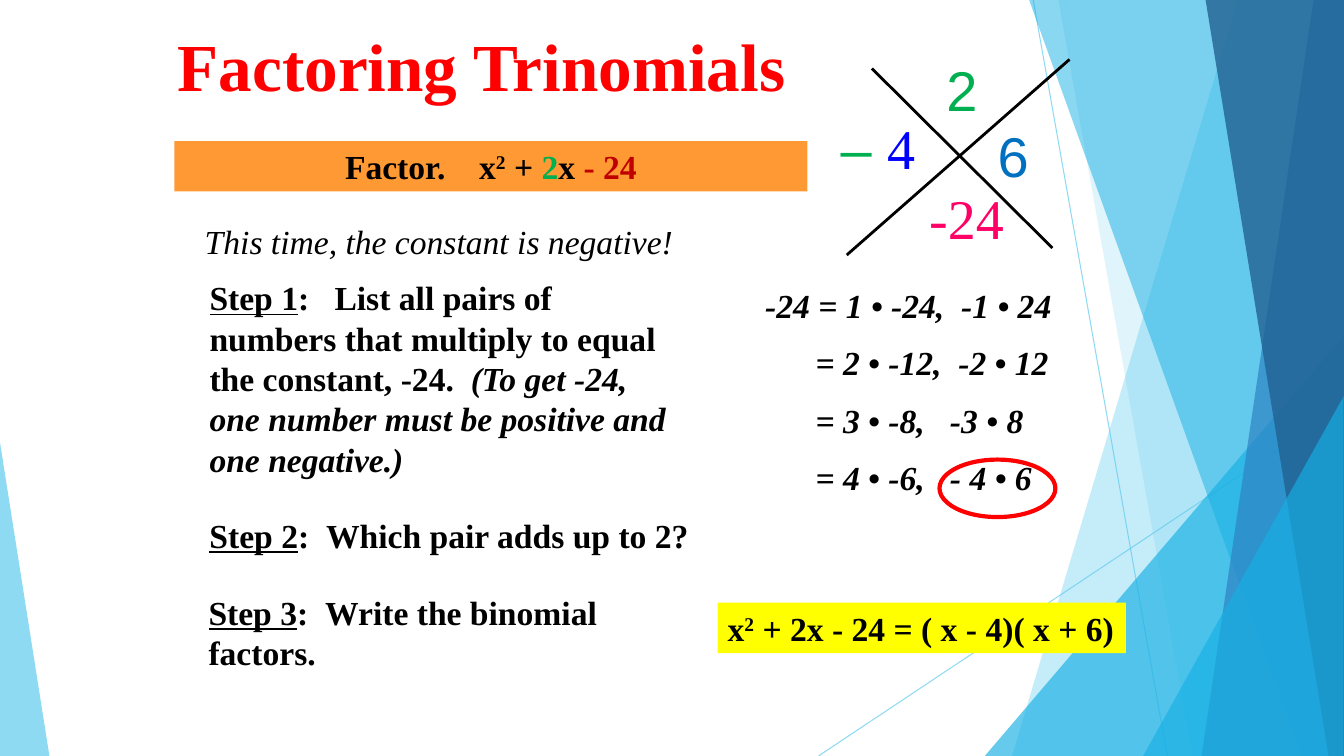
"""Build the Factoring Trinomials slide on a grid of tenth-inch cells."""
import pptx
import pptx.util
from pptx.dml.color import RGBColor
from pptx.enum.shapes import MSO_CONNECTOR, MSO_SHAPE
from pptx.enum.text import MSO_ANCHOR, MSO_AUTO_SIZE, PP_ALIGN
from pptx.oxml.ns import qn
from lxml import etree

CELL = pptx.util.Inches(0.1)
COLUMNS, ROWS = 133.33, 75
BLACK, GREEN, SKY, AZURE = "000000", "00B050", "5FCBEF", "17B0E4"
LEFT, CENTER = PP_ALIGN.LEFT, PP_ALIGN.CENTER
SPACE_WIDTH = 6


def paint(fill, color):
    """Fill a shape, a line or a font with a hex colour."""
    fill.solid()
    fill.fore_color.rgb = RGBColor.from_string(color)


def write(shape, cells, paragraphs, size=24, align=LEFT, wrap=True, gap=0):
    """Place a shape on the grid and write its paragraphs; a digit in a style widens a space."""
    shape.left, shape.top, shape.width, shape.height = (round(cell * CELL) for cell in cells)
    frame = shape.text_frame
    frame.word_wrap = wrap
    frame.auto_size = MSO_AUTO_SIZE.NONE
    frame.vertical_anchor = MSO_ANCHOR.TOP
    for index, (margin, runs) in enumerate(paragraphs):
        paragraph = frame.add_paragraph() if index else frame.paragraphs[0]
        properties = paragraph._p.get_or_add_pPr()
        properties.set("marL", str(margin * CELL))
        properties.set("indent", "0")
        etree.SubElement(properties, qn("a:buNone"))
        paragraph.alignment = align
        paragraph.space_before = pptx.util.Pt(gap if index else 0)
        for text, style, color in runs:
            run = paragraph.add_run()
            run.text = text
            run.font.name = "Arial" if "a" in style else "Times New Roman"
            run.font.size = pptx.util.Pt(size)
            run.font.bold = "b" in style
            run.font.italic = "i" in style
            run.font.underline = "u" in style
            paint(run.font.fill, color)
            if "^" in style:
                run._r.get_or_add_rPr().set("baseline", "30000")
            if style[-1:].isdigit():
                spacing = int(style[-1]) * SPACE_WIDTH * 100
                run._r.get_or_add_rPr().set("spc", str(spacing))


presentation = pptx.Presentation()
presentation.slide_width = round(COLUMNS * CELL)
presentation.slide_height = ROWS * CELL
slide = presentation.slides.add_slide(presentation.slide_layouts[1])
shapes = slide.shapes

layers = [
    ("line", SKY, 70, (102.5, 0, 115.8, ROWS, 0.75)),
    ("line", SKY, 70, (COLUMNS, 40.3, 81.2, ROWS, 0.75)),
    ("band", SKY, 36, (122.8, 100.4)),
    ("band", SKY, 20, (105, 118.3)),
    ("triangle", AZURE, 66, (97.7, 33.3, 35.6, 41.7, 1)),
    ("band", AZURE, 50, (102.1, 129.1)),
    ("band", "2E83C3", 70, (130.3, 119.2)),
    ("band", "226292", 80, (119.6, 131.8)),
    ("triangle", AZURE, 66, (113.4, 39.3, 19.9, 35.7, 1)),
    ("triangle", SKY, 70, (0, 43.9, 4.9, 31.1, 0)),
    ("line", BLACK, 100, (86.5, 6.8, 104.4, 24.6, 2)),
    ("line", BLACK, 100, (106.1, 5.9, 84, 25.3, 2)),
]
for kind, color, opacity, numbers in layers:
    lengths = [round(number * CELL) for number in numbers]
    if kind == "line":
        shape = shapes.add_connector(MSO_CONNECTOR.STRAIGHT, *lengths[:4])
        shape.line.width = pptx.util.Pt(numbers[4])
        paint(shape.line.fill, color)
        etree.SubElement(shape.element.spPr, qn("a:effectLst"))
    else:
        if kind == "band":
            top, bottom = lengths
            right, floor = presentation.slide_width, presentation.slide_height
            builder = shapes.build_freeform(top, 0)
            builder.add_line_segments([(right, 0), (right, floor), (bottom, floor)])
            shape = builder.convert_to_shape()
        else:
            shape = shapes.add_shape(MSO_SHAPE.ISOSCELES_TRIANGLE, *lengths[:4])
            shape.adjustments[0] = numbers[4]
        paint(shape.fill, color)
        shape.line.fill.background()
        shape.shadow.inherit = False
    for tint in shape.element.iter(qn("a:srgbClr")):
        etree.SubElement(tint, qn("a:alpha"), val=str(opacity * 1000))

write(shapes.title, (12.5, 1.9, 70.6, 9),
      [(0, [("Factoring Trinomials", "b", "FF0000")])], size=48, align=CENTER)

equations = [
    (0, "-24 = 1 • -24,", "1", "-1 • 24"),
    (5, "= 2 • -12,", "1", "-2 • 12"),
    (5, "= 3 • -8,", "2", "-3 • 8"),
    (5, "= 4 • -6,", "2", "- 4 • 6"),
]
write(slide.placeholders[1], (74.9, 27.8, 38.9, 23.2),
      [(margin, [(first, "bi", BLACK), (" ", "bi" + extra, BLACK), (second, "bi", BLACK)])
       for margin, first, extra, second in equations], gap=12)

steps = [
    ((19.8, 27, 47.5, 21.2), "Step 1", "2",
     "List all pairs of numbers that multiply to equal the constant, -24.",
     "(To get -24, one number must be positive and one negative.)"),
    ((19.8, 50.6, 50.7, 5), "Step 2", "1", "Which pair adds up to 2?", ""),
    ((19.7, 58.2, 50.9, 9.1), "Step 3", "1", "Write the binomial factors.", ""),
]
for cells, label, extra, task, hint in steps:
    runs = [(label, "bu", BLACK), (":", "b", BLACK), (" ", "b" + extra, BLACK), (task, "b", BLACK)]
    if hint:
        runs += [(" ", "b1", BLACK), (hint, "bi", BLACK)]
    write(shapes.add_textbox(0, 0, CELL, CELL), cells, [(0, runs)])

write(shapes.add_textbox(0, 0, CELL, CELL), (15.8, 21.4, 55.5, 5),
      [(0, [("This time, the constant is negative!", "i", BLACK)])], align=CENTER)

banners = [
    ((17.3, 14, 62.8, 5), "FF9933", CENTER, True,
     [("Factor.", "b", BLACK), (" ", "b3", BLACK), ("x", "b", BLACK), ("2", "b^", BLACK),
      (" + ", "b", BLACK), ("2", "b", GREEN), ("x ", "b", BLACK), ("- 24", "b", "C00000")]),
    ((71.2, 59.8, 40.5, 5), "FFFF00", LEFT, False,
     [("x", "b", BLACK), ("2", "b^", BLACK), (" + 2x - 24 = ( x - 4)( x + 6)", "b", BLACK)]),
]
for cells, color, align, wrap, runs in banners:
    banner = shapes.add_shape(MSO_SHAPE.RECTANGLE, 0, 0, CELL, CELL)
    banner.shadow.inherit = False
    banner.line.fill.background()
    paint(banner.fill, color)
    write(banner, cells, [(0, runs)], align=align, wrap=wrap)

cross_numbers = [
    ((91.2, 17.7, 17.3, 7.5), [("-24", "", "FF0066")]),
    ((92.9, 5, 18, 8.7), [("2", "a", GREEN)]),
    ((82.4, 10.8, 14.6, 9.1), [("– ", "a", GREEN), ("4", "", "0000FF")]),
    ((98, 11.6, 14.6, 9.7), [("6", "a", "0070C0")]),
]
for cells, runs in cross_numbers:
    write(shapes.add_textbox(0, 0, CELL, CELL), cells, [(0, runs)], size=40)

answer_ring = shapes.add_shape(
    MSO_SHAPE.OVAL, *(round(cell * CELL) for cell in (93.2, 45.6, 11.5, 5.7)))
answer_ring.shadow.inherit = False
answer_ring.fill.background()
paint(answer_ring.line.fill, "FF0000")
answer_ring.line.width = pptx.util.Pt(3)

presentation.save("out.pptx")
